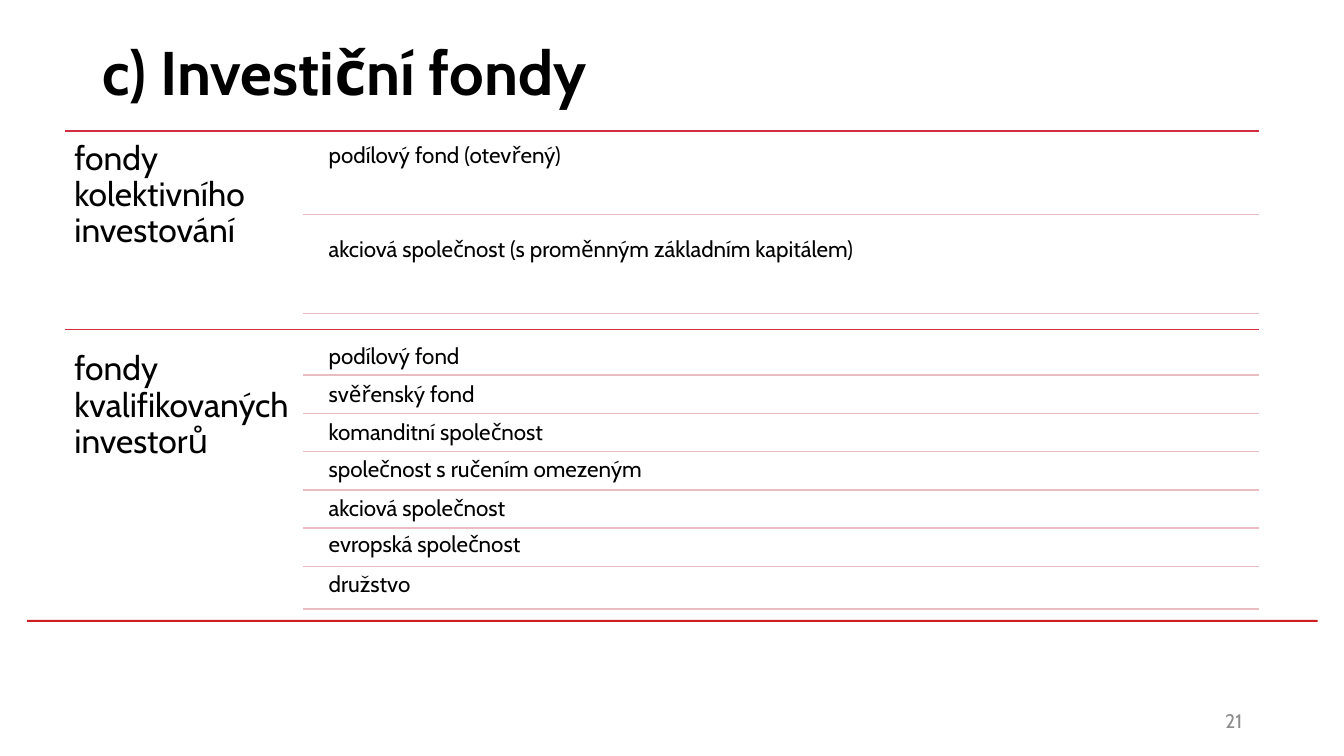
from pptx import Presentation
from pptx.dml.color import RGBColor
from pptx.enum.shapes import MSO_CONNECTOR, MSO_SHAPE
from pptx.enum.text import MSO_ANCHOR, PP_ALIGN
from pptx.oxml.ns import qn
from pptx.util import Inches, Pt
from lxml import etree

LINE, RECT = MSO_CONNECTOR.STRAIGHT, MSO_SHAPE.RECTANGLE
TOP, MIDDLE = MSO_ANCHOR.TOP, MSO_ANCHOR.MIDDLE
LEFT, RIGHT = PP_ALIGN.LEFT, PP_ALIGN.RIGHT

COLORS = {"text": "000000", "number": "8C8C8C", "bar": "CD1F21",
          "section": "D22D40", "row": "EABEC0"}
FORMATS = {
    "title": {"size": Pt(44), "bold": True},
    "label": {"size": Pt(24)},
    "row": {"size": Pt(16)},
    "number": {"size": Pt(14)},
}
LABEL_W = 2.37   # width of the label column
ROW_INDENT = 0.18  # gap between the label column and the row text

# Box, pitch, first text and rule offsets, row text height, label drop and height,
# rows as (text, text nudge, rule nudge)
SECTIONS = [
    {"box": (0.64, 1.3, 11.85), "pitch": 0.98, "text_y": 0.06, "rule_y": 0.83,
     "row_h": 1.11, "label": "fondy kolektivního investování",
     "label_y": 0, "label_h": 1.26,
     "rows": [("podílový fond (otevřený)", 0, 0),
              ("akciová společnost (s proměnným základním kapitálem)", -0.05, 0)]},
    {"box": (0.64, 3.27, 11.85), "pitch": 0.38, "text_y": 0.08, "rule_y": 0.45,
     "row_h": 0.32, "label": "fondy kvalifikovaných investorů",
     "label_y": 0.12, "label_h": 2.38,
     "rows": [("podílový fond", 0, 0),
              ("svěřenský fond", 0, 0),
              ("komanditní společnost", 0, 0),
              ("společnost s ručením omezeným", -0.01, 0),
              ("akciová společnost", -0.01, 0),
              ("evropská společnost", -0.03, 0),
              ("družstvo", -0.01, 0.04)]},
]


def add_text(s, box, text, kind, color="text", anchor=TOP, align=LEFT,
             insets=(0.1, 0.05), spacing=None):
    tf = s.shapes.add_textbox(*map(Inches, box)).text_frame
    tf.word_wrap = True
    tf.vertical_anchor = anchor
    tf.margin_left = tf.margin_right = Inches(insets[0])
    tf.margin_top = tf.margin_bottom = Inches(insets[1])
    p = tf.paragraphs[0]
    p.alignment = align
    if spacing:
        p.line_spacing = spacing
    r = p.add_run()
    r.text = text
    for name, value in {"name": "Cabin", **FORMATS[kind]}.items():
        setattr(r.font, name, value)
    r.font.color.rgb = RGBColor.from_string(COLORS[color])


def add_rule(s, x1, x2, y, color):
    line = s.shapes.add_connector(LINE, *map(Inches, (x1, y, x2, y)))
    line.line.color.rgb = RGBColor.from_string(COLORS[color])
    line.line.width = Pt(1)
    etree.SubElement(line._element.spPr, qn("a:effectLst"))


def add_section(s, sec):
    x, y, w = sec["box"]
    rows_x = x + LABEL_W
    text_x = rows_x + ROW_INDENT
    add_rule(s, x, x + w, y, "section")
    add_text(s, (x, y + sec["label_y"], LABEL_W, sec["label_h"]), sec["label"],
             "label", insets=(0.1, 0.1), spacing=0.9)
    for i, (text, text_nudge, rule_nudge) in enumerate(sec["rows"]):
        row_y = y + i * sec["pitch"]
        add_text(s, (text_x, row_y + sec["text_y"] + text_nudge,
                     x + w - text_x, sec["row_h"]),
                 text, "row", insets=(0.07, 0.07), spacing=0.9)
        add_rule(s, rows_x, x + w, row_y + sec["rule_y"] + rule_nudge, "row")


def add_frame(s):
    # Bar above the footer
    bar = s.shapes.add_shape(RECT, *map(Inches, (0.27, 6.15, 12.8, 0.02)))
    bar.shadow.inherit = False
    bar.fill.solid()
    bar.fill.fore_color.rgb = RGBColor.from_string(COLORS["bar"])
    bar.line.fill.background()
    # Title and slide number
    add_text(s, (0.92, 0.02, 11.5, 1.45), "c) Investiční fondy", "title",
             anchor=MIDDLE, spacing=0.9)
    add_text(s, (9.42, 6.95, 3, 0.4), "21", "number", "number", MIDDLE, RIGHT)


def main():
    prs = Presentation()
    prs.slide_width, prs.slide_height = Inches(13.33), Inches(7.5)
    s = prs.slides.add_slide(prs.slide_layouts[6])
    add_frame(s)
    for sec in SECTIONS:
        add_section(s, sec)
    prs.save("out.pptx")


if __name__ == "__main__":
    main()
